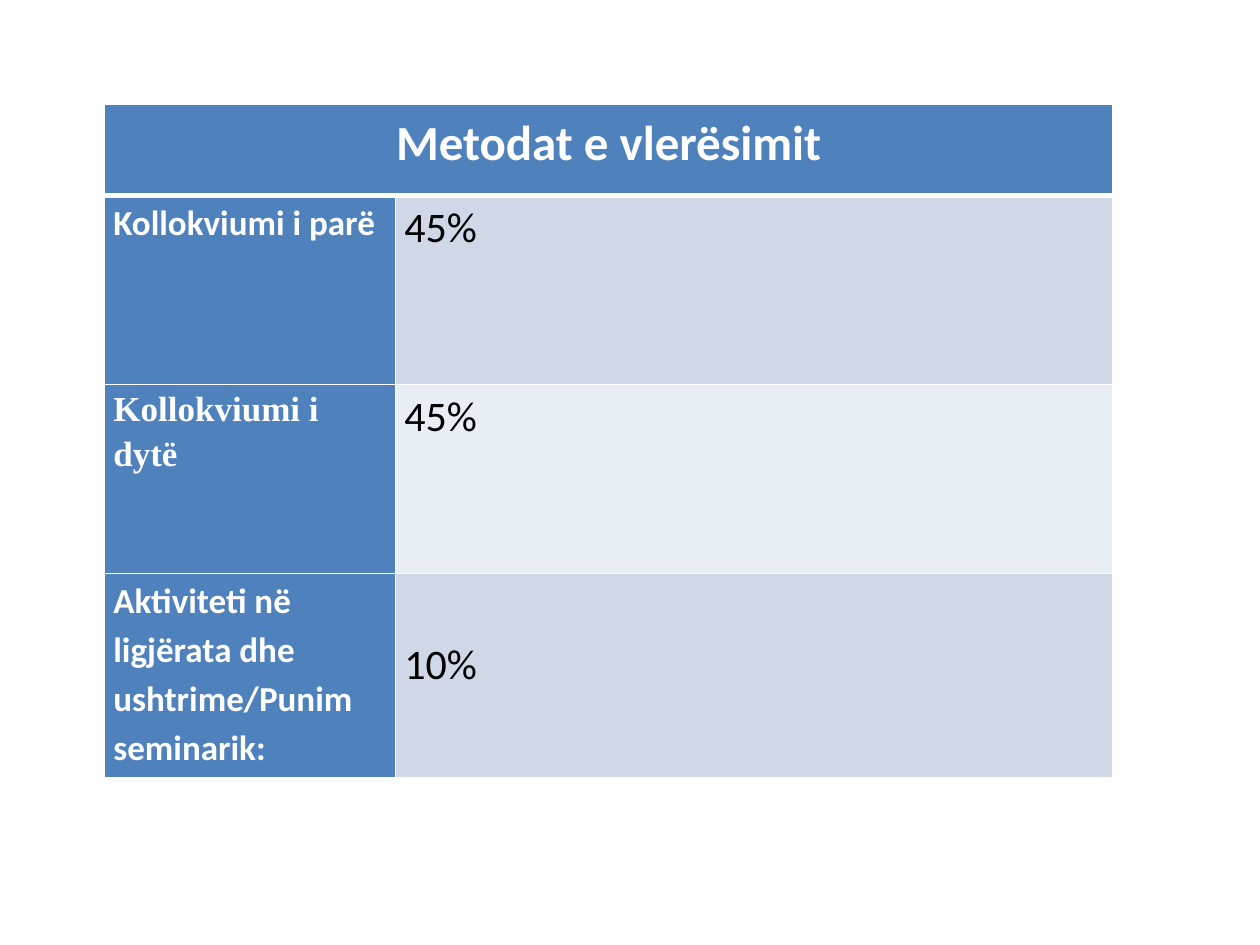
from dataclasses import dataclass

from lxml import etree
from pptx import Presentation
from pptx.dml.color import RGBColor
from pptx.enum.text import PP_ALIGN
from pptx.oxml.ns import qn
from pptx.util import Inches, Pt

LEFT, CENTER = PP_ALIGN.LEFT, PP_ALIGN.CENTER
BLANK_LAYOUT = 6
BLUE, WHITE, BLACK = "4F81BD", "FFFFFF", "000000"
BAND_FILLS = ("D0D8E8", "E9EDF4")
COLUMN_WIDTHS = (2.31, 5.69)
ROW_HEIGHTS = (0.72, 1.5, 1.5, 1.62)
TABLE_LEFT = TABLE_TOP = 0.83
SIDE_MARGIN = 0.07
THIN, THICK = 1, 3


@dataclass(frozen=True)
class TextStyle:
    """Look of the text in a table cell."""
    size: int
    color: str = WHITE
    bold: bool = True
    font: str = "Calibri"
    alignment: PP_ALIGN = LEFT


@dataclass(frozen=True)
class Assessment:
    """One assessment method and its share of the grade."""
    label: str
    share: str
    label_font: str = "Calibri"
    share_offset: float = 0


TITLE_STYLE = TextStyle(28, alignment=CENTER)
SHARE_STYLE = TextStyle(24, BLACK, bold=False)
ASSESSMENTS = (
    Assessment("Kollokviumi i parë", "45%"),
    Assessment("Kollokviumi i dytë", "45%", label_font="Times New Roman"),
    Assessment("Aktiviteti në ligjërata dhe ushtrime/Punim seminarik:", "10%",
               share_offset=0.47),
)


def rgb(color: str) -> RGBColor:
    """Turn a hex string into a colour."""
    return RGBColor.from_string(color)


def set_borders(cell, top: int, bottom: int) -> None:
    """Draw white borders, with top and bottom widths in points."""
    properties = cell._tc.get_or_add_tcPr()
    widths = {"a:lnL": THIN, "a:lnR": THIN, "a:lnT": top, "a:lnB": bottom}
    for index, (tag, width) in enumerate(widths.items()):
        line = etree.Element(qn(tag), w=str(Pt(width)))
        fill = etree.SubElement(line, qn("a:solidFill"))
        etree.SubElement(fill, qn("a:srgbClr"), val=WHITE)
        properties.insert(index, line)


def format_cell(cell, fill: str, top: int = THIN, bottom: int = THIN) -> None:
    """Set the fill, margins and borders of a cell."""
    cell.fill.solid()
    cell.fill.fore_color.rgb = rgb(fill)
    cell.margin_left = cell.margin_right = Inches(SIDE_MARGIN)
    cell.margin_top = cell.margin_bottom = 0
    set_borders(cell, top, bottom)


def write_cell(cell, text: str, style: TextStyle) -> None:
    """Write one styled run into a cell."""
    paragraph = cell.text_frame.paragraphs[0]
    paragraph.alignment = style.alignment
    paragraph.line_spacing = 1.15
    run = paragraph.add_run()
    run.text = text
    run.font.name = style.font
    run.font.size = Pt(style.size)
    run.font.bold = style.bold
    run.font.color.rgb = rgb(style.color)


def add_assessment_table(slide) -> None:
    """Add the table of assessment methods."""
    table = slide.shapes.add_table(
        len(ROW_HEIGHTS), len(COLUMN_WIDTHS), Inches(TABLE_LEFT), Inches(TABLE_TOP),
        Inches(sum(COLUMN_WIDTHS)), Inches(sum(ROW_HEIGHTS))).table
    for column, width in zip(table.columns, COLUMN_WIDTHS):
        column.width = Inches(width)
    for row, height in zip(table.rows, ROW_HEIGHTS):
        row.height = Inches(height)

    for cell in table.rows[0].cells:
        format_cell(cell, BLUE, bottom=THICK)
    title = table.cell(0, 0)
    title.merge(table.cell(0, 1))
    write_cell(title, "Metodat e vlerësimit", TITLE_STYLE)

    for index, assessment in enumerate(ASSESSMENTS):
        label, share = table.rows[index + 1].cells
        top = THIN if index else THICK
        format_cell(label, BLUE, top)
        format_cell(share, BAND_FILLS[index % len(BAND_FILLS)], top)
        share.margin_top = Inches(assessment.share_offset)
        write_cell(label, assessment.label, TextStyle(20, font=assessment.label_font))
        write_cell(share, assessment.share, SHARE_STYLE)


def main() -> None:
    """Build and save the slide."""
    presentation = Presentation()
    presentation.slide_width, presentation.slide_height = Inches(10), Inches(7.5)
    slide = presentation.slides.add_slide(presentation.slide_layouts[BLANK_LAYOUT])
    add_assessment_table(slide)
    presentation.save("out.pptx")


if __name__ == "__main__":
    main()
